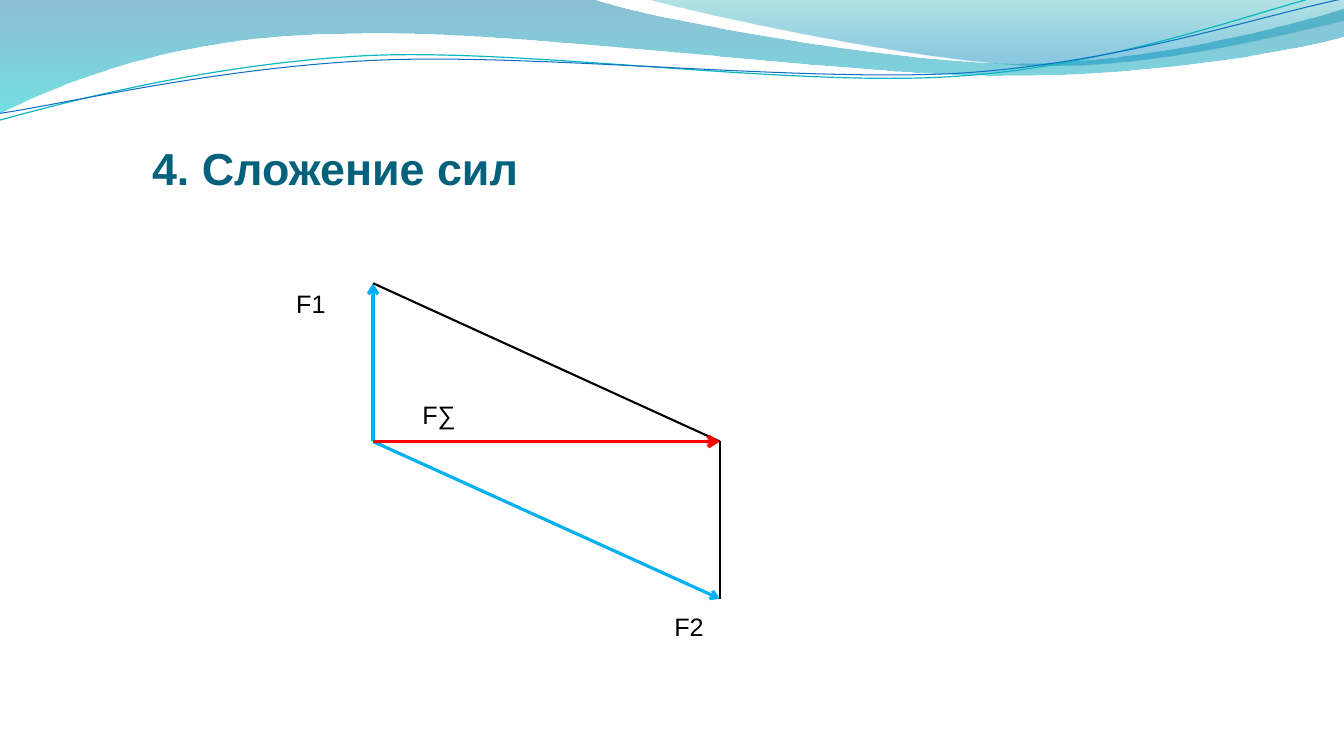
from dataclasses import dataclass

from lxml.etree import Element, SubElement
from pptx import Presentation
from pptx.dml.color import RGBColor as Rgb
from pptx.enum.shapes import MSO_CONNECTOR as Connector
from pptx.oxml.ns import qn
from pptx.util import Pt


@dataclass(frozen=True)
class Theme:
    font: str = "Arial"
    title_size: int = 32
    label_size: int = 18
    title: str = "04617B"
    ink: str = "000000"
    force: str = "00B0F0"
    total: str = "FF0000"
    back_wave: tuple = ((0, "0074A1", 45), (1, "00C6CF", 55))
    front_wave: tuple = ((0, "00A1A9", 30), (0.8, "008BBF", 45))
    teal_strand: str = "0AB8BF"
    blue_strand: str = "0F6FC6"
    strand_tilt: float = -2.7


class Painter:
    """Draws styled elements on one page, with lengths in px of 1/100 inch."""

    SCALE = 9144

    def __init__(self, deck, theme):
        self.theme = theme
        self.page = deck.slides.add_slide(deck.slide_layouts[6])

    def emu(self, *lengths):
        return [length * self.SCALE for length in lengths]

    def outline(self, start, segments, close):
        points = [self.emu(*pair) for segment in segments
                  for pair in zip(segment[::2], segment[1::2])]
        builder = self.page.shapes.build_freeform(*self.emu(*start))
        builder.add_line_segments(points, close=close)
        shape = builder.convert_to_shape()
        shape.shadow.inherit = False
        steps = iter(shape._element.findall(".//" + qn("a:lnTo")))
        for segment in segments:
            group = [next(steps) for _ in segment[::2]]
            if len(group) == 3:
                curve = Element(qn("a:cubicBezTo"))
                group[0].addprevious(curve)
                for step in group:
                    curve.append(step[0])
                    step.getparent().remove(step)
        return shape

    def wave(self, start, segments, stops):
        shape = self.outline(start, segments, True)
        shape.line.fill.background()
        shape.fill.gradient()
        shape.fill.gradient_angle = 270
        for stop, (position, color, _) in zip(shape.fill.gradient_stops, stops):
            stop.position = position
            stop.color.rgb = Rgb.from_string(color)
        colors = shape._element.spPr.findall(".//" + qn("a:srgbClr"))
        for node, (_, _, opacity) in zip(colors, stops):
            SubElement(node, qn("a:alpha")).set("val", str(opacity * 1000))

    def strand(self, start, segments, color, width):
        shape = self.outline(start, segments, False)
        shape.rotation = self.theme.strand_tilt
        shape.fill.background()
        shape.line.color.rgb = Rgb.from_string(color)
        shape.line.width = Pt(width)

    def line(self, start, end, color, width, arrow=False):
        connector = self.page.shapes.add_connector(
            Connector.STRAIGHT, *self.emu(*start, *end))
        connector.line.color.rgb = Rgb.from_string(color)
        connector.line.width = Pt(width)
        if arrow:
            SubElement(connector.line._get_or_add_ln(), qn("a:tailEnd")).set("type", "arrow")
        SubElement(connector._element.spPr, qn("a:effectLst"))

    def text(self, words, frame, size, color, bold=False, wrap=False, before=0):
        box = self.page.shapes.add_textbox(*self.emu(*frame))
        box.text_frame.word_wrap = wrap
        para = box.text_frame.paragraphs[0]
        para.space_before = Pt(before)
        span = para.add_run()
        span.text = words
        span.font.name = self.theme.font
        span.font.size = Pt(size)
        span.font.bold = bold
        span.font.color.rgb = Rgb.from_string(color)


def main():
    deck = Presentation()
    theme = Theme()
    deck.slide_width, deck.slide_height = 1333 * Painter.SCALE, 750 * Painter.SCALE
    painter = Painter(deck, theme)

    painter.wave((0, -1), [
        (587, -1), (634, 17, 885, 63, 1011, 63), (1138, 63, 1278, 26, 1333, 9),
        (1335, 36), (1311, 44, 1160, 76, 994, 75), (829, 75, 509, 28, 343, 34),
        (172, 35, 61, 83, -1, 113)], theme.back_wave)
    painter.wave((639, -1), [
        (679, 11, 909, 62, 1025, 65), (1141, 69, 1282, 32, 1333, 21),
        (1333, 0)], theme.front_wave)
    painter.strand((-3, 88), [
        (63, 73, 211, 41, 369, 41), (528, 42, 788, 93, 949, 89),
        (1109, 86, 1254, 36, 1333, 22)], theme.teal_strand, 0.85)
    painter.strand((-2, 81), [
        (62, 75, 218, 45, 378, 46), (537, 47, 795, 88, 954, 86),
        (1114, 83, 1256, 42, 1336, 30)], theme.blue_strand, 0.75)

    painter.text("4. Сложение сил", (141, 135, 1192, 480), theme.title_size,
                 theme.title, bold=True, wrap=True, before=4)

    origin, first_tip, second_tip, total_tip = (370, 438), (370, 281), (714, 594), (714, 438)
    painter.line(origin, first_tip, theme.force, 2.5, arrow=True)
    painter.line(origin, second_tip, theme.force, 2.25, arrow=True)
    painter.line(first_tip, total_tip, theme.ink, 1.5)
    painter.line(total_tip, second_tip, theme.ink, 1.5)
    painter.line(origin, total_tip, theme.total, 2.75, arrow=True)

    for words, frame in (("F1", (284, 281, 50, 71)), ("F2", (659, 602, 50, 40)),
                         ("F∑", (409, 391, 54, 40))):
        painter.text(words, frame, theme.label_size, theme.ink)

    deck.save("out.pptx")


if __name__ == "__main__":
    main()
